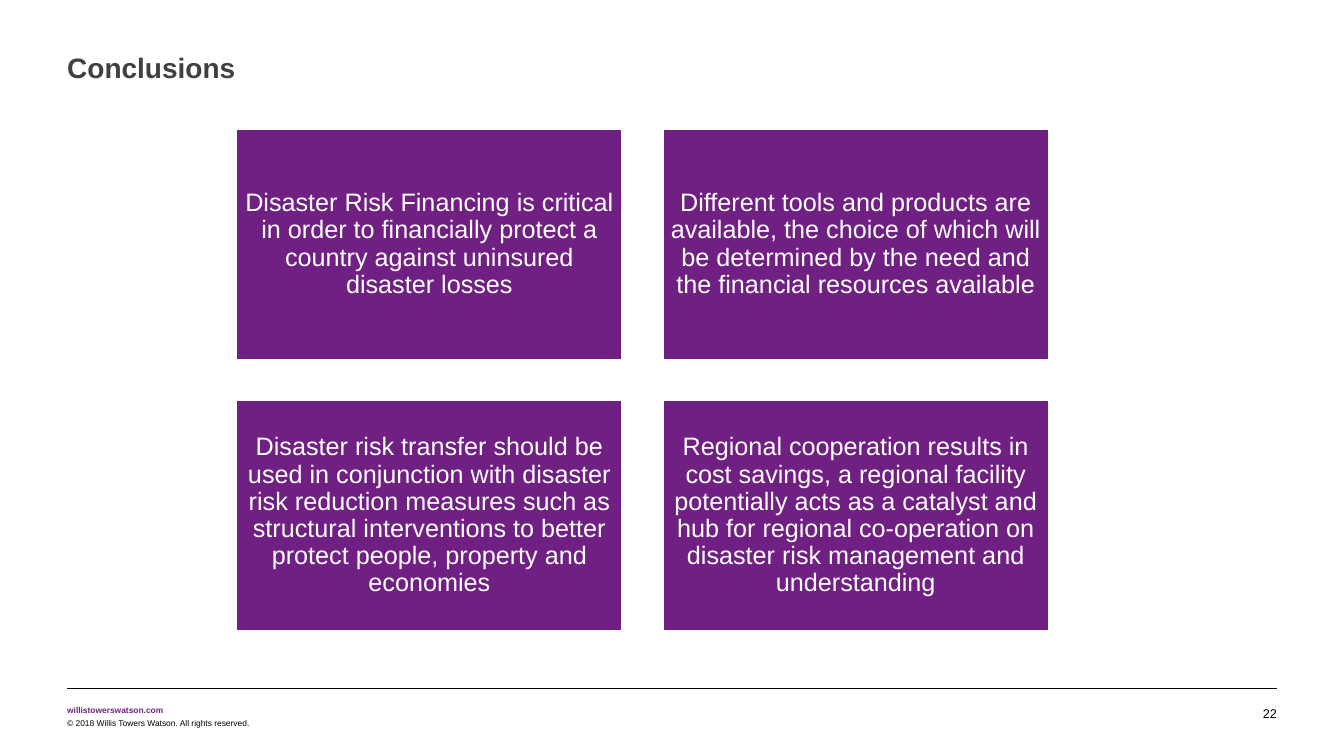
"""Build the Conclusions slide: four statement boxes in a two-by-two grid above a footer."""
from dataclasses import dataclass

from lxml import etree
from pptx import Presentation
from pptx import util as u
from pptx.dml import color
from pptx.enum import shapes, text
from pptx.oxml import ns

FONT = "Arial"
PURPLE, WHITE, BLACK, GREY = "702082", "FFFFFF", "000000", "404040"
MARGIN, RIGHT_EDGE = 48, 912
GRID_LEFT, GRID_TOP = 168.5, 91.5
BOX_WIDTH, BOX_HEIGHT, GAP = 276.5, 165.9, 28
COLUMNS = 2

STATEMENTS = (
    "Disaster Risk Financing is critical in order to financially protect a country "
    "against uninsured disaster losses",
    "Different tools and products are available, the choice of which will be "
    "determined by the need and the financial resources available",
    "Disaster risk transfer should be used in conjunction with disaster risk reduction "
    "measures such as structural interventions to better protect people, property and economies",
    "Regional cooperation results in cost savings, a regional facility potentially acts as "
    "a catalyst and hub for regional co-operation on disaster risk management and understanding",
)


@dataclass(frozen=True)
class Style:
    size: float
    color: str
    bold: bool = False
    align: text.PP_ALIGN = text.PP_ALIGN.LEFT
    anchor: text.MSO_ANCHOR = text.MSO_ANCHOR.TOP
    inset: float = 0
    line_spacing: float = 1.0
    wrap: bool = True


@dataclass(frozen=True)
class Label:
    words: str
    left: float
    top: float
    width: float
    height: float
    style: Style


TITLE = Label("Conclusions", MARGIN, 36, 864, 24.5, Style(20, GREY, bold=True))
FOOTERS = (
    Label("willistowerswatson.com", MARGIN, 504, 69, 7.2,
          Style(6, PURPLE, bold=True, wrap=False)),
    Label("© 2018 Willis Towers Watson. All rights reserved.", MARGIN, 512.9, 554, 7.2,
          Style(6, BLACK)),
    Label("22", 872, 504, 40, 10.8,
          Style(9, BLACK, align=text.PP_ALIGN.RIGHT, anchor=text.MSO_ANCHOR.BOTTOM)),
)
BOX_STYLE = Style(18, WHITE, align=text.PP_ALIGN.CENTER, anchor=text.MSO_ANCHOR.MIDDLE,
                  inset=5, line_spacing=0.9)


def rgb(value: str) -> color.RGBColor:
    return color.RGBColor.from_string(value)


def write(shape, words: str, style: Style) -> None:
    frame = shape.text_frame
    frame.auto_size = text.MSO_AUTO_SIZE.NONE
    frame.word_wrap = style.wrap
    frame.vertical_anchor = style.anchor
    frame.margin_left = frame.margin_right = u.Pt(style.inset)
    frame.margin_top = frame.margin_bottom = u.Pt(style.inset)
    paragraph = frame.paragraphs[0]
    paragraph.alignment = style.align
    paragraph.line_spacing = style.line_spacing
    run = paragraph.add_run()
    run.text = words
    run.font.name = FONT
    run.font.size = u.Pt(style.size)
    run.font.bold = style.bold
    run.font.color.rgb = rgb(style.color)


def add_title(slide, label: Label) -> None:
    title = slide.shapes.title
    title.left, title.top = u.Pt(label.left), u.Pt(label.top)
    title.width, title.height = u.Pt(label.width), u.Pt(label.height)
    write(title, label.words, label.style)


def add_label(slide, label: Label) -> None:
    box = slide.shapes.add_textbox(
        u.Pt(label.left), u.Pt(label.top), u.Pt(label.width), u.Pt(label.height))
    write(box, label.words, label.style)


def add_statement(slide, index: int, words: str) -> None:
    row, column = divmod(index, COLUMNS)
    box = slide.shapes.add_shape(
        shapes.MSO_SHAPE.RECTANGLE,
        u.Pt(GRID_LEFT + column * (BOX_WIDTH + GAP)),
        u.Pt(GRID_TOP + row * (BOX_HEIGHT + GAP)),
        u.Pt(BOX_WIDTH), u.Pt(BOX_HEIGHT))
    box.shadow.inherit = False
    box.fill.solid()
    box.fill.fore_color.rgb = rgb(PURPLE)
    box.line.color.rgb = rgb(WHITE)
    box.line.width = u.Pt(2)
    write(box, words, BOX_STYLE)


def add_footer_rule(slide) -> None:
    rule = slide.shapes.add_connector(
        shapes.MSO_CONNECTOR.STRAIGHT,
        u.Pt(MARGIN), u.Pt(491.8), u.Pt(RIGHT_EDGE), u.Pt(491.8))
    rule.line.color.rgb = rgb(BLACK)
    rule.line.width = u.Pt(0.25)
    etree.SubElement(rule._element.spPr, ns.qn("a:effectLst"))


def main() -> None:
    presentation = Presentation()
    presentation.slide_width, presentation.slide_height = u.Pt(960), u.Pt(540)
    slide = presentation.slides.add_slide(presentation.slide_layouts[5])
    add_title(slide, TITLE)
    for index, words in enumerate(STATEMENTS):
        add_statement(slide, index, words)
    add_footer_rule(slide)
    for label in FOOTERS:
        add_label(slide, label)
    presentation.save("out.pptx")


if __name__ == "__main__":
    main()
